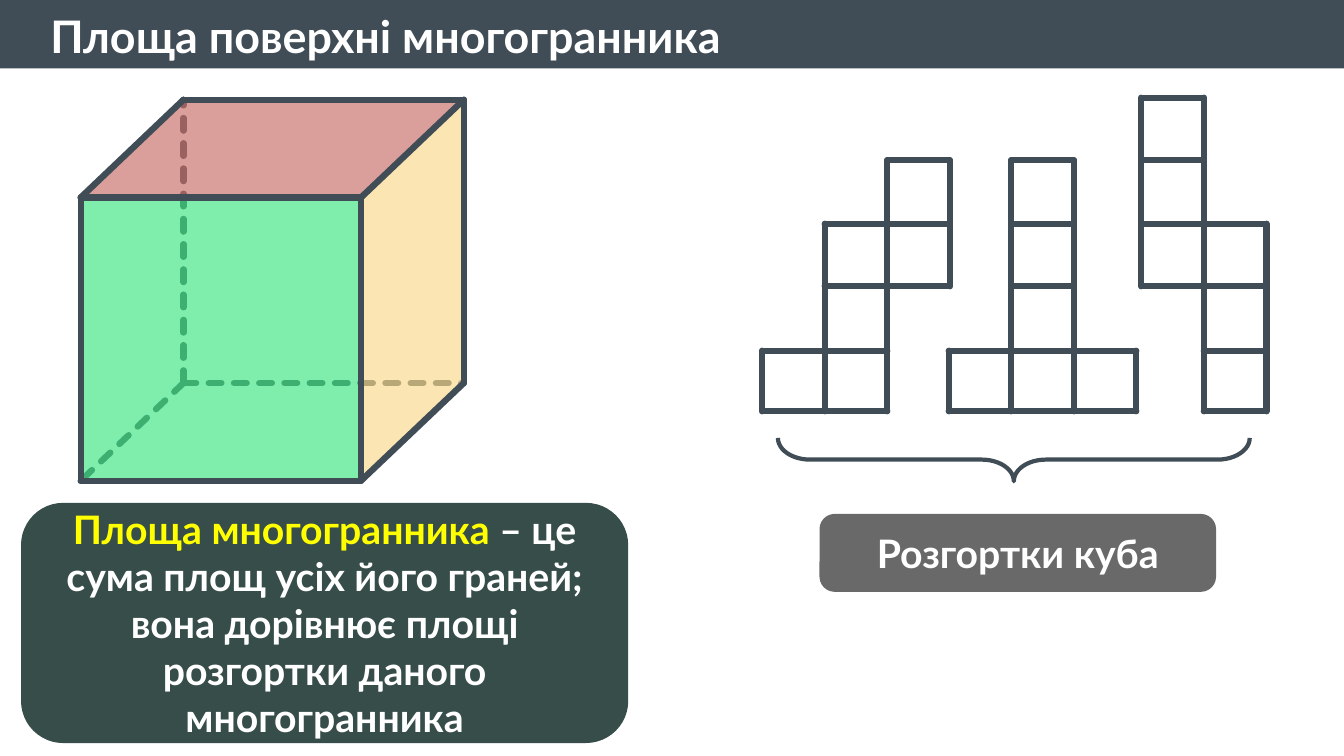
from lxml import etree
from pptx import Presentation, util as u
from pptx.dml.color import RGBColor
from pptx.enum import dml, shapes, text
from pptx.oxml.ns import qn

PX = 9144
THEME = {
    "font": "Lato", "title": 32, "body": 28, "edge": 4.5, "brace": 3, "face_alpha": 65,
    "slate": "404D56", "front": "3BE580", "top": "C96D66", "side": "F9D889",
    "definition": "374D4A", "label": "696969", "key": "FFFF00", "white": "FFFFFF",
}


def edge(start, end, dashed=False):
    line = page.shapes.add_connector(
        shapes.MSO_CONNECTOR.STRAIGHT, *[value * PX for value in (*start, *end)])
    line.line.color.rgb = RGBColor.from_string(THEME["slate"])
    line.line.width = u.Pt(THEME["edge"])
    if dashed:
        line.line.dash_style = dml.MSO_LINE.SQUARE_DOT
    properties = line._element.spPr
    properties.find(qn("a:ln")).set("cap", "rnd")
    etree.SubElement(properties, qn("a:effectLst"))


def write(para, words, size="body", color="white", align=text.PP_ALIGN.CENTER):
    para.alignment = align
    span = para.add_run()
    span.text = words
    span.font.name = THEME["font"]
    span.font.size = u.Pt(THEME[size])
    span.font.bold = True
    span.font.color.rgb = RGBColor.from_string(THEME[color])


deck = Presentation()
deck.slide_width, deck.slide_height = 1333 * PX, 750 * PX
page = deck.slides.add_slide(deck.slide_layouts[6])

left, right, top, bottom = 80, 358, 196, 477
shift_x, shift_y = 102, 97
front = [(left, top), (right, top), (right, bottom), (left, bottom)]
back = [(x + shift_x, y - shift_y) for x, y in front]

for corner in (back[2], back[0], front[3]):
    edge(back[3], corner, dashed=True)

faces = [
    ("front", front),
    ("top", [front[0], back[0], back[1], front[1]]),
    ("side", [front[1], back[1], back[2], front[2]]),
]
for name, corners in faces:
    builder = page.shapes.build_freeform(*corners[0], scale=PX)
    builder.add_line_segments(corners[1:], close=True)
    face = builder.convert_to_shape()
    face.shadow.inherit = False
    face.line.fill.background()
    face.fill.solid()
    face.fill.fore_color.rgb = RGBColor.from_string(THEME[name])
    tint = face._element.spPr.find(qn("a:solidFill"))[0]
    etree.SubElement(tint, qn("a:alpha")).set("val", str(THEME["face_alpha"] * 1000))

for index in range(4):
    edge(front[index], front[(index + 1) % 4])
for index in range(3):
    edge(front[index], back[index])
for index in range(2):
    edge(back[index], back[index + 1])

banner = page.shapes.add_shape(shapes.MSO_SHAPE.RECTANGLE, 0, 0, deck.slide_width, 68 * PX)
banner.shadow.inherit = False
banner.fill.solid()
banner.fill.fore_color.rgb = RGBColor.from_string(THEME["slate"])
banner.line.fill.background()
title = page.shapes.add_textbox(40 * PX, 4 * PX, 1238 * PX, 64 * PX).text_frame
title.word_wrap = True
write(title.paragraphs[0], "Площа поверхні многогранника", size="title",
      align=text.PP_ALIGN.LEFT)

CELL = 62
row_lines = [97, 159, 222, 284, 348, 408]
nets = [
    (756, ["   ", "  #", " ##", " # ", "## "]),
    (941, ["   ", " # ", " # ", " # ", "###"]),
    (1132, ["# ", "# ", "##", " #", " #"]),
]
for net_left, rows in nets:
    net_edges = set()
    for row, marks in enumerate(rows):
        y1, y2 = row_lines[row:row + 2]
        for column, mark in enumerate(marks):
            if mark == "#":
                x1 = net_left + column * CELL
                x2 = x1 + CELL
                net_edges |= {((x1, y1), (x2, y1)), ((x1, y2), (x2, y2)),
                              ((x1, y1), (x1, y2)), ((x2, y1), (x2, y2))}
    for start, end in sorted(net_edges):
        edge(start, end)

brace = page.shapes.add_shape(
    shapes.MSO_SHAPE.RIGHT_BRACE, 984 * PX, 222 * PX, 43 * PX, 468 * PX)
brace.rotation = 90
brace.adjustments[0] = 0.74
brace.shadow.inherit = False
brace.fill.background()
brace.line.color.rgb = RGBColor.from_string(THEME["slate"])
brace.line.width = u.Pt(THEME["brace"])

captions = [
    ("definition", (24, 502, 596, 232), [
        ("Площа многогранника", "key"),
        (" – це сума площ усіх його граней; вона дорівнює площі розгортки даного многогранника",
         "white")]),
    ("label", (816, 513, 387, 71), [("Розгортки куба", "white")]),
]
for name, bounds, parts in captions:
    box = page.shapes.add_shape(
        shapes.MSO_SHAPE.ROUNDED_RECTANGLE, *[value * PX for value in bounds])
    box.shadow.inherit = False
    box.fill.solid()
    box.fill.fore_color.rgb = RGBColor.from_string(THEME[name])
    box.line.color.rgb = RGBColor.from_string(THEME[name])
    box.line.width = u.Pt(THEME["edge"])
    box.text_frame.word_wrap = True
    box.text_frame.vertical_anchor = text.MSO_ANCHOR.MIDDLE
    for words, color in parts:
        write(box.text_frame.paragraphs[0], words, color=color)

deck.save("out.pptx")
